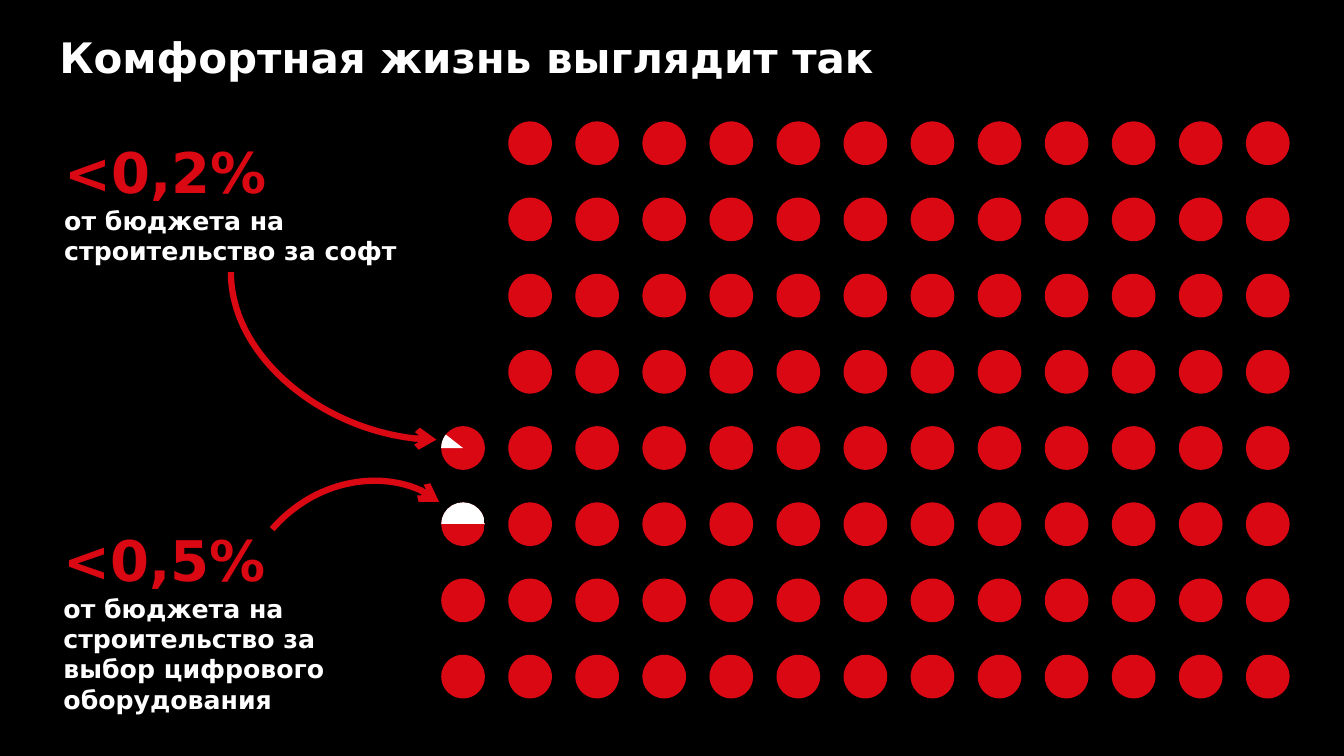
"""Builds the slide that shows software and equipment costs as a share of a dot grid."""
from dataclasses import dataclass
from math import cos, radians, sin

from lxml import etree
from pptx import Presentation
from pptx.dml.color import RGBColor
from pptx.enum.shapes import MSO_CONNECTOR, MSO_SHAPE
from pptx.enum.text import MSO_ANCHOR, PP_ALIGN
from pptx.oxml.ns import qn
from pptx.util import Cm, Pt


@dataclass(frozen=True)
class Theme:
    font: str = "DejaVu Sans"
    black: RGBColor = RGBColor(0x00, 0x00, 0x00)
    white: RGBColor = RGBColor(0xFF, 0xFF, 0xFF)
    red: RGBColor = RGBColor(0xDA, 0x08, 0x12)
    title: float = 30
    figure: float = 40
    caption: float = 18
    arrow: float = 4.5


class SlideBuilder:
    def __init__(self, slide, theme):
        self.slide, self.theme = slide, theme

    def background(self):
        fill = self.slide.background.fill
        fill.solid()
        fill.fore_color.rgb = self.theme.black

    def style(self, r, size, color):
        r.font.name = self.theme.font
        r.font.size = Pt(size)
        r.font.bold = True
        r.font.color.rgb = color

    def title(self, text, x, y, w, h):
        sp = self.slide.shapes.title
        sp.left, sp.top, sp.width, sp.height = Cm(x), Cm(y), Cm(w), Cm(h)
        tf = sp.text_frame
        tf.text = text
        tf.vertical_anchor = MSO_ANCHOR.TOP
        p = tf.paragraphs[0]
        p.alignment = PP_ALIGN.LEFT
        self.style(p.runs[0], self.theme.title, self.theme.white)

    def callout(self, figure, caption, x, y, w, h):
        tf = self.slide.shapes.add_textbox(Cm(x), Cm(y), Cm(w), Cm(h)).text_frame
        tf.word_wrap = True
        p = tf.paragraphs[0]
        p.text = f"{figure}\v{caption}"
        self.style(p.runs[0], self.theme.figure, self.theme.red)
        self.style(p.runs[1], self.theme.caption, self.theme.white)

    def paint(self, sp, color):
        sp.shadow.inherit = False
        sp.line.fill.background()
        sp.fill.solid()
        sp.fill.fore_color.rgb = color

    def dot(self, x, y, size):
        sp = self.slide.shapes.add_shape(MSO_SHAPE.OVAL, Cm(x), Cm(y), Cm(size), Cm(size))
        self.paint(sp, self.theme.red)
        return sp

    def half_dot(self, x, y, size):
        fill = self.dot(x, y, size).fill
        fill.gradient()
        fill.gradient_angle = 90
        for stop, color in zip(fill.gradient_stops, (self.theme.red, self.theme.white)):
            stop.position = 0.5
            stop.color.rgb = color

    def sliced_dot(self, x, y, size, start, end):
        self.dot(x, y, size)
        radius = size / 2
        cx, cy = x + radius, y + radius
        arc = [(Cm(cx + radius * cos(radians(a))), Cm(cy + radius * sin(radians(a))))
               for a in range(start, end + 1)]
        builder = self.slide.shapes.build_freeform(Cm(cx), Cm(cy))
        builder.add_line_segments(arc, close=True)
        self.paint(builder.convert_to_shape(), self.theme.white)

    def curved_arrow(self, x, y, w, h, angle, **flips):
        cxn = self.slide.shapes.add_connector(
            MSO_CONNECTOR.CURVE, Cm(x), Cm(y), Cm(x + w), Cm(y + h))
        cxn.line.color.rgb = self.theme.red
        cxn.line.width = Pt(self.theme.arrow)
        spPr = cxn._element.spPr
        spPr.find(qn("a:prstGeom")).set("prst", "curvedConnector2")
        xfrm = spPr.find(qn("a:xfrm"))
        xfrm.set("rot", str(angle * 60000))
        for name, value in flips.items():
            xfrm.set(name, value)
        etree.SubElement(spPr.find(qn("a:ln")), qn("a:tailEnd"), type="arrow")
        etree.SubElement(spPr, qn("a:effectLst"))


def main():
    prs = Presentation()
    prs.slide_width, prs.slide_height = Cm(33.87), Cm(19.05)
    s = SlideBuilder(prs.slides.add_slide(prs.slide_layouts[5]), Theme())
    s.background()
    s.title("Комфортная жизнь выглядит так", 1.24, 0.66, 21.9, 3.02)
    s.callout("<0,2%", "от бюджета на строительство за софт", 1.37, 3.35, 8.89, 3.5)

    left, top, step_x, step_y, size = 11.12, 3.06, 1.69, 1.92, 1.1
    columns, rows, sliced_row, half_row = 13, 8, 4, 5
    for row in range(rows):
        y = top + row * step_y
        for column in range(1, columns):
            s.dot(left + column * step_x, y, size)
        if row == sliced_row:
            s.sliced_dot(left, y, size, 180, 218)
        elif row == half_row:
            s.half_dot(left, y, size)
        elif row > half_row:
            s.dot(left, y, size)

    s.curved_arrow(6.3, 6.38, 4.22, 5.18, 270, flipH="1")
    s.callout("<0,5%", "от бюджета на строительство за выбор цифрового оборудования",
              1.35, 13.13, 7.87, 5.05)
    s.curved_arrow(7.32, 11.63, 3.28, 2.72, 131, flipH="1", flipV="1")
    prs.save("out.pptx")


if __name__ == "__main__":
    main()
